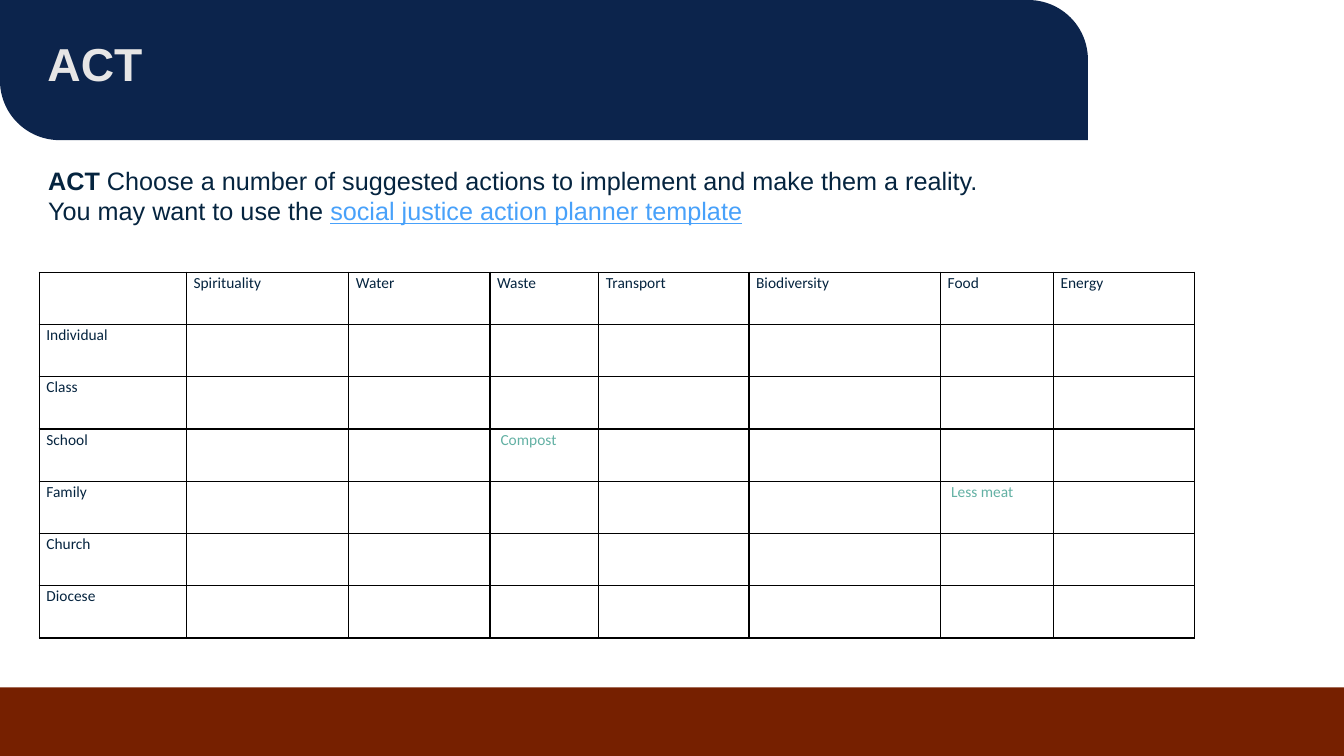
from lxml import etree
from pptx import Presentation
from pptx.dml.color import RGBColor
from pptx.enum.shapes import MSO_SHAPE
from pptx.enum.text import MSO_ANCHOR, PP_ALIGN
from pptx.oxml import parse_xml
from pptx.util import Pt

PX = 9144
NAVY = RGBColor(0x0C, 0x24, 0x4C)
RUST = RGBColor(0x76, 0x20, 0x00)
INK = RGBColor(0x05, 0x24, 0x3F)
PALE = RGBColor(0xE7, 0xE6, 0xE6)
TEAL = RGBColor(0x63, 0xB1, 0xA4)
LINK = RGBColor(0x48, 0xA1, 0xFA)
BLACK = RGBColor(0, 0, 0)

RECTANGLE = MSO_SHAPE.RECTANGLE
DIAGONAL_ROUNDED = MSO_SHAPE.ROUND_2_DIAG_RECTANGLE
TOP = MSO_ANCHOR.TOP
LEFT = PP_ALIGN.LEFT
NAMESPACE = "http://schemas.openxmlformats.org/drawingml/2006/main"

TITLE = {"name": "Arial", "size": Pt(33), "bold": True, "color": PALE}
BODY = {"name": "Arial", "size": Pt(18), "bold": False, "color": INK}
CELL = {"name": "Calibri", "size": Pt(11), "bold": False, "color": INK}

COLUMN_WIDTHS = [146, 161, 140, 108, 149, 190, 112, 140]
TOPICS = ["Spirituality", "Water", "Waste", "Transport", "Biodiversity", "Food", "Energy"]
GROUPS = ["Individual", "Class", "School", "Family", "Church", "Diocese"]
EXAMPLES = {("School", "Waste"): " Compost", ("Family", "Food"): " Less meat"}


def px(*lengths):
    """Convert px lengths to EMU."""
    return [length * PX for length in lengths]


def format_font(font, values):
    """Apply a dict of format values to a font."""
    for name, value in values.items():
        if name == "color":
            font.color.rgb = value
        else:
            setattr(font, name, value)


def add_block(slide, preset, box, color):
    """Add a plain filled shape."""
    shape = slide.shapes.add_shape(preset, *px(*box))
    shape.shadow.inherit = False
    shape.fill.solid()
    shape.fill.fore_color.rgb = color
    shape.line.fill.background()
    return shape


def add_banner(slide, box, text):
    """Add the title banner and set the title on it."""
    left, top, width, height = box
    banner = add_block(slide, DIAGONAL_ROUNDED, box, NAVY)
    banner.adjustments[0] = 0
    banner.adjustments[1] = 0.425
    title = slide.shapes.title
    banner._element.addnext(title._element)
    title.left, title.top, title.width, title.height = px(left + 37, top + 36, width + 102, height - 52)
    title.text_frame.text = text
    title.text_frame.vertical_anchor = TOP
    paragraph = title.text_frame.paragraphs[0]
    paragraph.alignment = LEFT
    paragraph.line_spacing = 0.9
    format_font(paragraph.runs[0].font, TITLE)


def add_instructions(slide, box):
    """Add the two lines of instructions."""
    frame = slide.shapes.add_textbox(*px(*box)).text_frame
    frame.word_wrap = True
    lines = [
        [("ACT ", {"bold": True}),
         ("Choose a number of suggested actions to implement and make them a reality.", {})],
        [("You may want to use the ", {}),
         ("social justice action planner template", {"color": LINK, "underline": True})],
    ]
    for index, line in enumerate(lines):
        paragraph = frame.add_paragraph() if index else frame.paragraphs[0]
        for text, changes in line:
            run = paragraph.add_run()
            run.text = text
            format_font(run.font, BODY | changes)


def add_borders(cell):
    """Draw a thin black line on each side of a cell."""
    properties = cell._tc.get_or_add_tcPr()
    for side in ("lnL", "lnR", "lnT", "lnB"):
        line = parse_xml(f'<a:{side} xmlns:a="{NAMESPACE}" w="{Pt(1)}"/>')
        fill = etree.SubElement(line, f"{{{NAMESPACE}}}solidFill")
        etree.SubElement(fill, f"{{{NAMESPACE}}}srgbClr", val=str(BLACK))
        properties.append(line)


def fill_cell(cell, text, color):
    """Write and format one table cell."""
    cell.margin_left, cell.margin_right, cell.margin_top, cell.margin_bottom = px(7, 7, 0, 0)
    add_borders(cell)
    cell.fill.background()
    cell.text = text
    paragraph = cell.text_frame.paragraphs[0]
    paragraph.line_spacing = 1.07
    format_font(paragraph.font, CELL | {"color": color})
    for run in paragraph.runs:
        format_font(run.font, CELL | {"color": color})


def add_planner(slide, box):
    """Add the action table of groups against topics."""
    rows = [["", *TOPICS]]
    rows += [[group, *(EXAMPLES.get((group, topic), "") for topic in TOPICS)] for group in GROUPS]
    table = slide.shapes.add_table(len(rows), len(rows[0]), *px(*box)).table
    table.first_row = False
    table.horz_banding = False
    for column, width in zip(table.columns, COLUMN_WIDTHS):
        column.width = width * PX
    for row_index, row in enumerate(rows):
        for column_index, text in enumerate(row):
            color = TEAL if row_index and column_index else INK
            fill_cell(table.cell(row_index, column_index), text, color)


def main():
    """Build and save the slide."""
    presentation = Presentation()
    presentation.slide_width, presentation.slide_height = px(1333, 750)
    slide = presentation.slides.add_slide(presentation.slide_layouts[5])
    add_block(slide, RECTANGLE, (0, 682, 1333, 68), RUST)
    add_banner(slide, (0, 0, 1079, 139), "ACT")
    add_planner(slide, (39, 270, sum(COLUMN_WIDTHS), 363))
    add_instructions(slide, (38, 159, 1144, 71))
    presentation.save("out.pptx")


if __name__ == "__main__":
    main()
